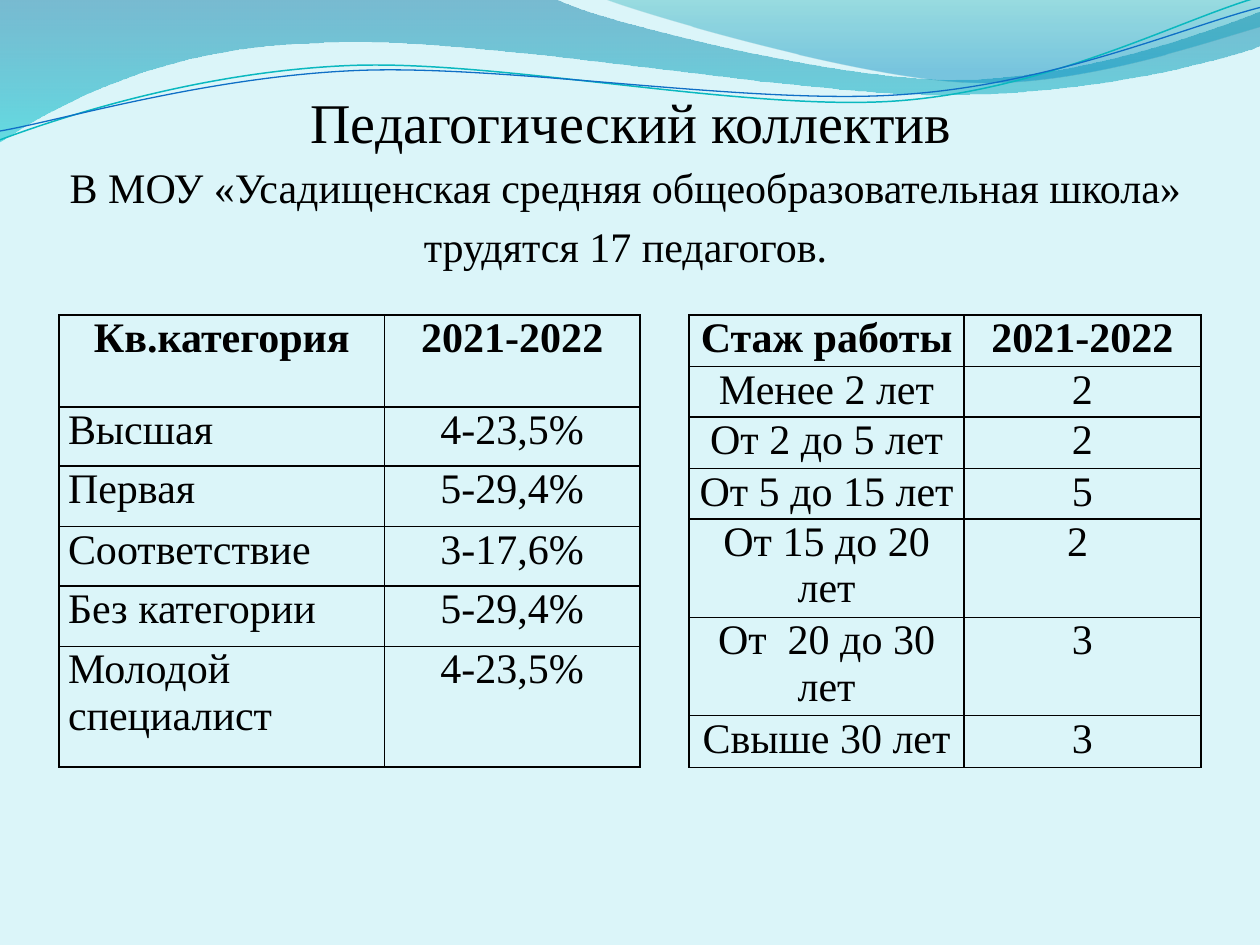
from dataclasses import dataclass
from math import cos, radians, sin

from lxml.etree import SubElement
from pptx import Presentation
from pptx.dml.color import RGBColor
from pptx.enum.text import MSO_ANCHOR, MSO_AUTO_SIZE, PP_ALIGN
from pptx.oxml.ns import qn
from pptx.util import Inches, Pt


@dataclass(frozen=True)
class Theme:
    font: str = "Times New Roman"
    ink: str = "000000"
    background: str = "DBF5F9"
    teal_line: str = "0AB8BF"
    blue_line: str = "0F6FC6"
    title_size: int = 32
    text_size: int = 24
    border: int = 1


THEME = Theme()
LINE_TILT = -2.7

# Waves: a start point, then straight (2 numbers) or Bezier (6 numbers) segments.
# Gradient stops: position, colour, opacity in percent.
BANDS = [
    ((0, 0), [
        (4.4, -0.01),
        (4.76, 0.17, 6.64, 0.63, 7.58, 0.63),
        (8.53, 0.63, 9.58, 0.26, 10, 0.09),
        (10.01, 0.36),
        (9.83, 0.44, 8.7, 0.76, 7.46, 0.75),
        (6.22, 0.75, 3.82, 0.28, 2.57, 0.34),
        (1.29, 0.36, 0.46, 0.83, -0.01, 1.13),
    ], [(0, "0074A1", 45), (1, "00C6CF", 55)]),
    ((4.79, -0.01), [
        (5.09, 0.11, 6.82, 0.62, 7.69, 0.65),
        (8.56, 0.69, 9.61, 0.32, 10, 0.21),
        (10, 0),
    ], [(0, "00A1A9", 30), (0.8, "008BBF", 45)]),
]
# Lines: start, segments, centre of the tilt, colour, width.
LINES = [
    ((0, 1.11), [
        (0.48, 0.93, 1.58, 0.57, 2.77, 0.52),
        (3.95, 0.47, 5.93, 0.89, 7.13, 0.8),
        (8.33, 0.71, 9.38, 0.15, 9.98, -0.02),
    ], (4.99, 0.58), THEME.teal_line, 0.85),
    ((0, 1.04), [
        (0.47, 0.96, 1.64, 0.61, 2.83, 0.56),
        (4.03, 0.51, 5.97, 0.84, 7.17, 0.75),
        (8.36, 0.67, 9.41, 0.21, 10, 0.06),
    ], (5, 0.59), THEME.blue_line, 0.75),
]

CATEGORIES = [
    ("Кв.категория", "2021-2022"),
    ("Высшая", "4-23,5%"),
    ("Первая", "5-29,4%"),
    ("Соответствие", "3-17,6%"),
    ("Без категории", "5-29,4%"),
    ("Молодой специалист", "4-23,5%"),
]
EXPERIENCE = [
    ("Стаж работы", "2021-2022"),
    ("Менее 2 лет", "2"),
    ("От 2 до 5 лет", "2"),
    ("От 5 до 15 лет", "5"),
    ("От 15 до 20 лет", "2"),
    ("От  20 до 30 лет", "3"),
    ("Свыше 30 лет", "3"),
]


def color(value):
    return RGBColor.from_string(value)


def format_paragraph(paragraph, size, align=PP_ALIGN.CENTER, bold=False):
    paragraph.alignment = align
    for run in paragraph.runs:
        run.font.name = THEME.font
        run.font.size = Pt(size)
        run.font.bold = bold
        run.font.color.rgb = color(THEME.ink)


def place(placeholder, left, top, width, height):
    placeholder.left, placeholder.top = Inches(left), Inches(top)
    placeholder.width, placeholder.height = Inches(width), Inches(height)
    placeholder.text_frame.word_wrap = True
    placeholder.text_frame.auto_size = MSO_AUTO_SIZE.NONE


def turn(point, centre, degrees):
    angle = radians(degrees)
    x, y = point[0] - centre[0], point[1] - centre[1]
    return (centre[0] + x * cos(angle) - y * sin(angle),
            centre[1] + x * sin(angle) + y * cos(angle))


def add_wave(slide, start, segments, close, centre=(0, 0), tilt=0):
    """Lay a freeform through all control points, then bend its Bezier parts."""
    points = [start]
    for segment in segments:
        points += zip(segment[::2], segment[1::2])
    first, *others = [(Inches(x), Inches(y)) for x, y in
                      (turn(point, centre, -tilt) for point in points)]
    builder = slide.shapes.build_freeform(*first)
    builder.add_line_segments(others, close=close)
    wave = builder.convert_to_shape()
    wave.rotation = tilt
    wave.shadow.inherit = False

    straight = iter(list(wave._element.spPr.iter(qn("a:lnTo"))))
    for segment in segments:
        piece = next(straight)
        if len(segment) == 6:
            piece.tag = qn("a:cubicBezTo")
            for _ in range(2):
                extra = next(straight)
                piece.append(extra[0])
                extra.getparent().remove(extra)
    return wave


def add_band(slide, start, segments, stops):
    band = add_wave(slide, start, segments, True)
    band.line.fill.background()
    band.fill.gradient()
    band.fill.gradient_angle = 270
    for stop, (position, value, _) in zip(band.fill.gradient_stops, stops):
        stop.position = position
        stop.color.rgb = color(value)
    tints = list(band._element.spPr.iter(qn("a:srgbClr")))
    for tint, (_, _, opacity) in zip(tints, stops):
        SubElement(tint, qn("a:alpha"), val=str(opacity * 1000))
    return band


def add_line(slide, start, segments, centre, value, width):
    line = add_wave(slide, start, segments, False, centre, LINE_TILT)
    line.fill.background()
    line.line.color.rgb = color(value)
    line.line.width = Pt(width)
    return line


def add_borders(cell):
    properties = cell._tc.get_or_add_tcPr()
    for side in ("a:lnL", "a:lnR", "a:lnT", "a:lnB"):
        border = SubElement(properties, qn(side), w=str(Pt(THEME.border)))
        fill = SubElement(border, qn("a:solidFill"))
        SubElement(fill, qn("a:srgbClr"), val=THEME.ink)


def add_staff_table(slide, left, top, widths, heights, rows, label_align):
    frame = slide.shapes.add_table(
        len(rows), len(widths), Inches(left), Inches(top),
        Inches(sum(widths)), Inches(sum(heights)))
    table = frame.table
    table.first_row = table.horz_banding = False
    for column, width in zip(table.columns, widths):
        column.width = Inches(width)
    for r, (height, values) in enumerate(zip(heights, rows)):
        table.rows[r].height = Inches(height)
        for c, value in enumerate(values):
            cell = table.cell(r, c)
            add_borders(cell)
            cell.fill.background()
            cell.margin_left = cell.margin_right = Inches(0.07)
            cell.margin_top = cell.margin_bottom = 0
            cell.text_frame.text = value
            align = label_align if r and c == 0 else PP_ALIGN.CENTER
            format_paragraph(cell.text_frame.paragraphs[0], THEME.text_size,
                             align, bold=r == 0)
    return table


def main():
    presentation = Presentation()
    presentation.slide_width, presentation.slide_height = Inches(10), Inches(7.5)
    slide = presentation.slides.add_slide(presentation.slide_layouts[1])
    slide.background.fill.solid()
    slide.background.fill.fore_color.rgb = color(THEME.background)

    # Waves, behind the text
    waves = [add_band(slide, *band) for band in BANDS]
    waves += [add_line(slide, *line) for line in LINES]
    for index, wave in enumerate(waves, start=2):
        slide.shapes._spTree.insert(index, wave._element)

    # Title
    title = slide.shapes.title
    place(title, 0.51, 0.36, 9, 0.87)
    heading = title.text_frame
    heading.text = "Педагогический коллектив"
    heading.vertical_anchor = MSO_ANCHOR.BOTTOM
    heading.margin_left = heading.margin_right = heading.margin_bottom = 0
    format_paragraph(heading.paragraphs[0], THEME.title_size)

    # Introduction
    intro = slide.placeholders[1]
    place(intro, 0.28, 1.23, 9.37, 1.81)
    intro.text_frame.text = ("В МОУ «Усадищенская средняя общеобразовательная школа»\n"
                             "трудятся 17 педагогов.")
    for paragraph in intro.text_frame.paragraphs:
        format_paragraph(paragraph, THEME.text_size)
        properties = paragraph._p.get_or_add_pPr()
        properties.set("marL", str(Inches(0.3)))
        properties.set("indent", str(Inches(-0.3)))
        SubElement(properties, qn("a:buNone"))

    # Staff tables
    add_staff_table(slide, 0.47, 2.5, [2.58, 2.03], [0.73] + [0.47, 0.48] * 2 + [0.96],
                    CATEGORIES, PP_ALIGN.JUSTIFY)
    experience = add_staff_table(slide, 5.47, 2.5, [2.18, 1.88],
                                 [0.41, 0.4] * 2 + [0.78] * 2 + [0.41],
                                 EXPERIENCE, PP_ALIGN.CENTER)
    indented = experience.cell(4, 1).text_frame.paragraphs[0]
    indented.alignment = PP_ALIGN.LEFT
    indented._p.get_or_add_pPr().set("marL", str(Inches(0.75)))

    presentation.save("out.pptx")


if __name__ == "__main__":
    main()
